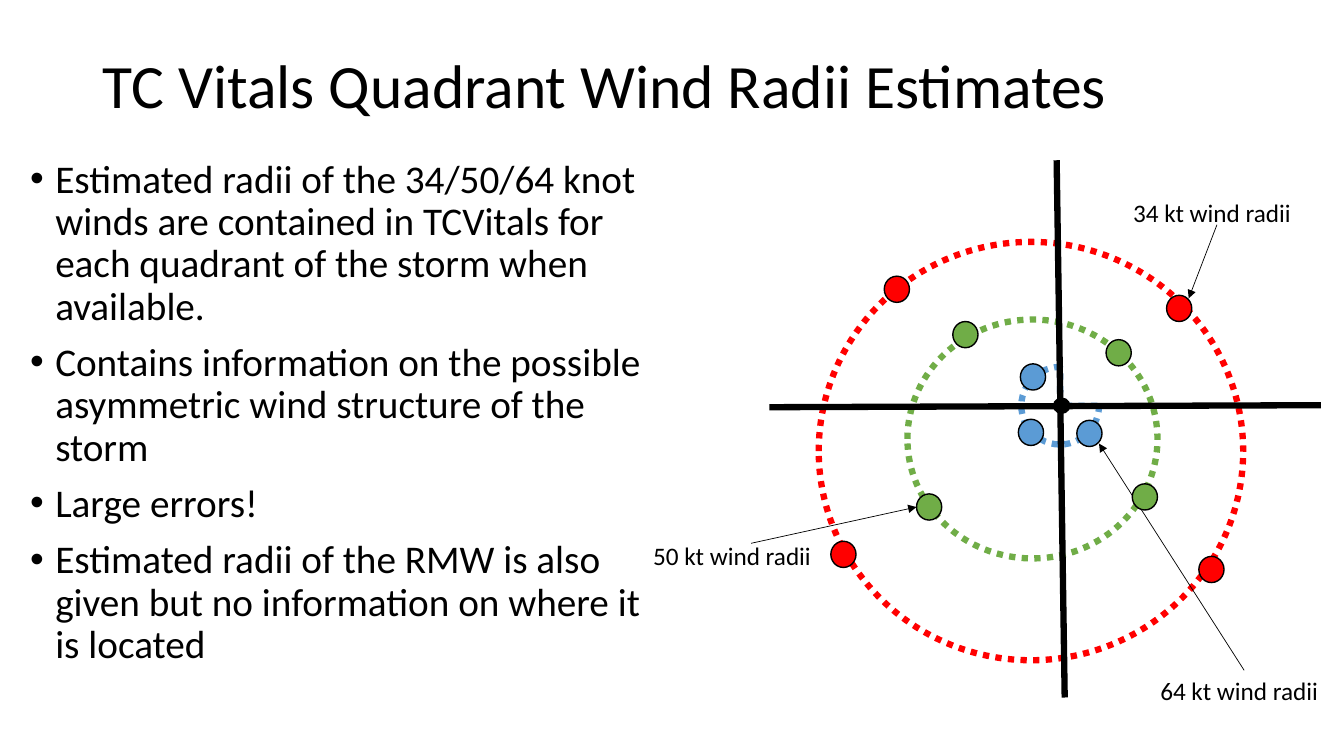
"""Build the slide on TC Vitals quadrant wind radii estimates."""
from lxml import etree
from pptx import Presentation
from pptx.dml.color import RGBColor
from pptx.enum.dml import MSO_LINE
from pptx.enum.shapes import MSO_CONNECTOR, MSO_SHAPE
from pptx.enum.text import MSO_ANCHOR
from pptx.oxml.ns import qn
from pptx.util import Inches, Pt

BLACK = RGBColor(0x00, 0x00, 0x00)
RED = RGBColor(0xFF, 0x00, 0x00)
GREEN = RGBColor(0x70, 0xAD, 0x47)
BLUE = RGBColor(0x5B, 0x9B, 0xD5)
ELLIPSE, PIE = MSO_SHAPE.OVAL, MSO_SHAPE.PIE
DOTTED = MSO_LINE.ROUND_DOT
STRAIGHT = MSO_CONNECTOR.STRAIGHT
TOP, MIDDLE = MSO_ANCHOR.TOP, MSO_ANCHOR.MIDDLE
FONT = "Calibri"

TITLE = "TC Vitals Quadrant Wind Radii Estimates"
BULLETS = [
    "Estimated radii of the 34/50/64 knot winds are contained in TCVitals "
    "for each quadrant of the storm when available.",
    "Contains information on the possible asymmetric wind structure of the storm",
    "Large errors!",
    "Estimated radii of the RMW is also given but no information on where it is located",
]
RINGS = [
    (ELLIPSE, RED, (8.12, 2.4, 4.21, 4.15)),
    (ELLIPSE, GREEN, (9, 3.17, 2.48, 2.37)),
    (PIE, BLUE, (10.13, 3.64, 0.77, 0.77)),
]
AXES = [((10.48, 1.59), (10.56, 6.92)), ((7.63, 4.04), (13.1, 4.02))]
CALLOUTS = [
    ("64 kt wind radii", (11.41, 6.65), (12.34, 6.65), (10.9, 4.4)),
    ("50 kt wind radii", (6.38, 5.31), (7.45, 5.39), (9.09, 5.03)),
    ("34 kt wind radii", (11.14, 1.91), (12.07, 2.23), (11.79, 2.96)),
]
QUADRANT_DOTS = {
    RED: [(11.89, 5.52), (11.57, 2.93), (8.24, 5.37), (8.77, 2.74)],
    BLUE: [(10.68, 4.17), (10.1, 4.16), (10.12, 3.61)],
    GREEN: [(11.23, 4.8), (9.09, 4.9), (10.97, 3.37), (9.45, 3.19)],
}


def add_text(s, box, paragraphs, size, anchor=TOP, spacing=1.0):
    """Add a wrapped text box and return its paragraphs."""
    tf = s.shapes.add_textbox(*map(Inches, box)).text_frame
    tf.word_wrap = True
    tf.vertical_anchor = anchor
    for i, text in enumerate(paragraphs):
        p = tf.add_paragraph() if i else tf.paragraphs[0]
        p.line_spacing = spacing
        r = p.add_run()
        r.text = text
        r.font.name = FONT
        r.font.size = Pt(size)
        r.font.color.rgb = BLACK
    return tf.paragraphs


def add_bullet(p):
    """Give a paragraph a hanging bullet and space before."""
    p.space_before = Pt(10)
    pPr = p._p.get_or_add_pPr()
    pPr.set("marL", str(Inches(0.25)))
    pPr.set("indent", str(Inches(-0.25)))
    etree.SubElement(pPr, qn("a:buFont")).set("typeface", "Arial")
    etree.SubElement(pPr, qn("a:buChar")).set("char", "•")


def add_outline(s, kind, box, color, width):
    """Add an unfilled preset shape with a coloured outline."""
    sp = s.shapes.add_shape(kind, *map(Inches, box))
    sp.shadow.inherit = False
    sp.fill.background()
    sp.line.color.rgb = color
    sp.line.width = Pt(width)
    return sp


def add_ring(s, kind, color, box):
    """Add a dotted wind radius."""
    add_outline(s, kind, box, color, 4.5).line.dash_style = DOTTED


def add_dot(s, color, left, top, width=0.25, height=0.26):
    """Add a filled dot with a thin black outline."""
    sp = add_outline(s, ELLIPSE, (left, top, width, height), BLACK, 1)
    sp.fill.solid()
    sp.fill.fore_color.rgb = color


def add_line(s, start, end, width, arrow=False):
    """Add a straight black line, optionally with an arrowhead at its end."""
    line = s.shapes.add_connector(STRAIGHT, *map(Inches, start + end))
    line.line.color.rgb = BLACK
    line.line.width = Pt(width)
    if arrow:
        etree.SubElement(line.line._ln, qn("a:tailEnd")).set("type", "triangle")
    etree.SubElement(line._element.spPr, qn("a:effectLst"))


def main():
    """Build and save the slide."""
    prs = Presentation()
    prs.slide_width, prs.slide_height = Inches(13.33), Inches(7.5)
    s = prs.slides.add_slide(prs.slide_layouts[6])

    add_text(s, (0.92, 0.15, 11.5, 1.45), [TITLE], 44, MIDDLE, 0.9)
    for p in add_text(s, (0.2, 1.53, 6.34, 5.26), BULLETS, 28, spacing=0.9):
        add_bullet(p)

    for kind, color, box in RINGS:
        add_ring(s, kind, color, box)
    add_dot(s, BLACK, 10.45, 3.95, 0.16, 0.15)
    for start, end in AXES:
        add_line(s, start, end, 4.5)
    for label, corner, start, end in CALLOUTS:
        add_line(s, start, end, 0.5, arrow=True)
        add_text(s, corner + (1.86, 0.4), [label], 18)
    for color, corners in QUADRANT_DOTS.items():
        for left, top in corners:
            add_dot(s, color, left, top)

    prs.save("out.pptx")


if __name__ == "__main__":
    main()
